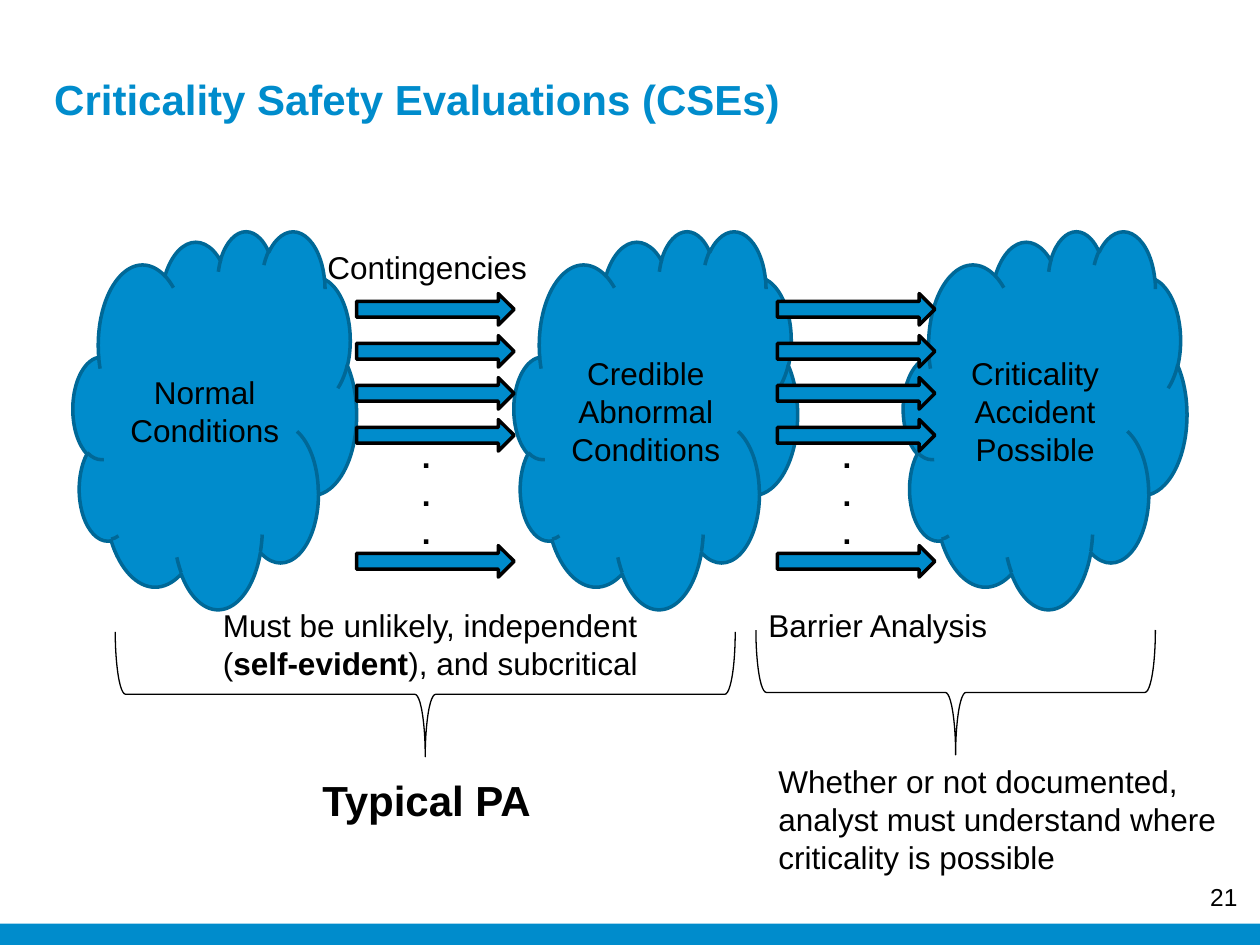
from dataclasses import dataclass

from pptx import Presentation
from pptx.dml.color import RGBColor as RGB
from pptx.enum.shapes import MSO_SHAPE as Shape
from pptx.enum.text import MSO_ANCHOR as Anchor, MSO_AUTO_SIZE as Fit, PP_ALIGN as Align
from pptx.util import Inches, Pt


@dataclass(frozen=True)
class Theme:
    font: str = "Arial"
    blue: RGB = RGB(0x00, 0x8C, 0xCC)
    edge: RGB = RGB(0x00, 0x68, 0x97)
    ink: RGB = RGB(0, 0, 0)
    head: int = 24
    body: int = 18
    small: int = 14


class Deck:
    def __init__(self, theme):
        self.theme = theme
        self.file = Presentation()
        self.file.slide_width, self.file.slide_height = Inches(10), Inches(7.5)
        self.slide = self.file.slides.add_slide(self.file.slide_layouts[5])

    def fill_text(self, frame, lines, size, color=None, bold=False, align=Align.LEFT):
        """Fill a frame; a line is a string or a list of (text, bold) runs."""
        for i, line in enumerate(lines):
            para = frame.paragraphs[0] if i == 0 else frame.add_paragraph()
            para.alignment = align
            runs = [(line, bold)] if isinstance(line, str) else line
            for text, heavy in runs:
                run = para.add_run()
                run.text = text
                font = run.font
                font.name, font.size, font.bold = self.theme.font, Pt(size), heavy
                font.color.rgb = color or self.theme.ink

    def title(self, text, x, y, w, h):
        box = self.slide.shapes.title
        box.left, box.top, box.width, box.height = map(Inches, (x, y, w, h))
        frame = box.text_frame
        frame.auto_size = Fit.NONE
        frame.vertical_anchor = Anchor.BOTTOM
        frame.margin_bottom = 0
        self.fill_text(frame, [text], self.theme.head, self.theme.blue, True)

    def shape(self, kind, x, y, w, h, fill=None, edge=None, width=2):
        item = self.slide.shapes.add_shape(kind, *map(Inches, (x, y, w, h)))
        item.shadow.inherit = False
        if fill is None:
            item.fill.background()
        else:
            item.fill.solid()
            item.fill.fore_color.rgb = fill
        if edge is None:
            item.line.fill.background()
        else:
            item.line.color.rgb = edge
            item.line.width = Pt(width)
        return item

    def cloud(self, x, lines):
        item = self.shape(Shape.CLOUD, x, 1.83, 2.25, 3, self.theme.blue, self.theme.edge)
        frame = item.text_frame
        frame.word_wrap = True
        frame.vertical_anchor = Anchor.MIDDLE
        self.fill_text(frame, lines, self.theme.body, align=Align.CENTER)

    def flow(self, x):
        """Draw a column of arrows with dots before the last one."""
        for step in (0, 1, 2, 3, 6):
            self.shape(Shape.RIGHT_ARROW, x, 2.33 + step / 3, 1.25, 0.25,
                       self.theme.blue, self.theme.ink)
        self.text(["."] * 3, x + 0.42, 3.42, 0.27, 1.01, bold=True)

    def brace(self, x, y, w, h):
        item = self.shape(Shape.LEFT_BRACE, x, y, w, h, edge=self.theme.ink, width=0.75)
        item.rotation = 270

    def text(self, lines, x, y, w, h, size=None, bold=False):
        box = self.slide.shapes.add_textbox(*map(Inches, (x, y, w, h)))
        frame = box.text_frame
        frame.word_wrap = False
        frame.auto_size = Fit.SHAPE_TO_FIT_TEXT
        self.fill_text(frame, lines, size or self.theme.body, bold=bold)

    def number(self, text, x, y, w, h):
        box = self.slide.shapes.add_textbox(*map(Inches, (x, y, w, h)))
        frame = box.text_frame
        frame.word_wrap = True
        frame.vertical_anchor = Anchor.MIDDLE
        self.fill_text(frame, [text], self.theme.small, align=Align.RIGHT)


def main():
    theme = Theme()
    deck = Deck(theme)
    deck.shape(Shape.RECTANGLE, 0, 7.33, 10, 0.17, theme.blue)
    deck.title("Criticality Safety Evaluations (CSEs)", 0.33, 0.33, 9.33, 0.65)
    deck.number("21", 9.42, 6.92, 0.5, 0.4)

    deck.cloud(0.58, ["Normal", "Conditions"])
    deck.cloud(4.08, ["Credible Abnormal", "Conditions"])
    deck.cloud(7.17, ["Criticality", "Accident", "Possible"])
    for x in (2.83, 6.17):
        deck.flow(x)

    deck.text(["Contingencies"], 2.5, 1.92, 1.8, 0.4)
    deck.text(["Must be unlikely, independent",
               [("(", False), ("self-evident", True), ("), and subcritical", False)]],
              1.67, 4.76, 3.52, 0.71)
    deck.text(["Barrier Analysis"], 6, 4.76, 1.95, 0.4)

    deck.brace(2.88, 3.05, 0.99, 4.92)
    deck.text(["Typical PA"], 2.46, 6.1, 1.87, 0.5, theme.head, True)
    deck.brace(7.09, 3.91, 0.99, 3.17)
    deck.text(["Whether or not documented,", "analyst must understand where",
               "criticality is possible"], 6.08, 6, 3.71, 1.01)
    deck.file.save("out.pptx")


if __name__ == "__main__":
    main()
